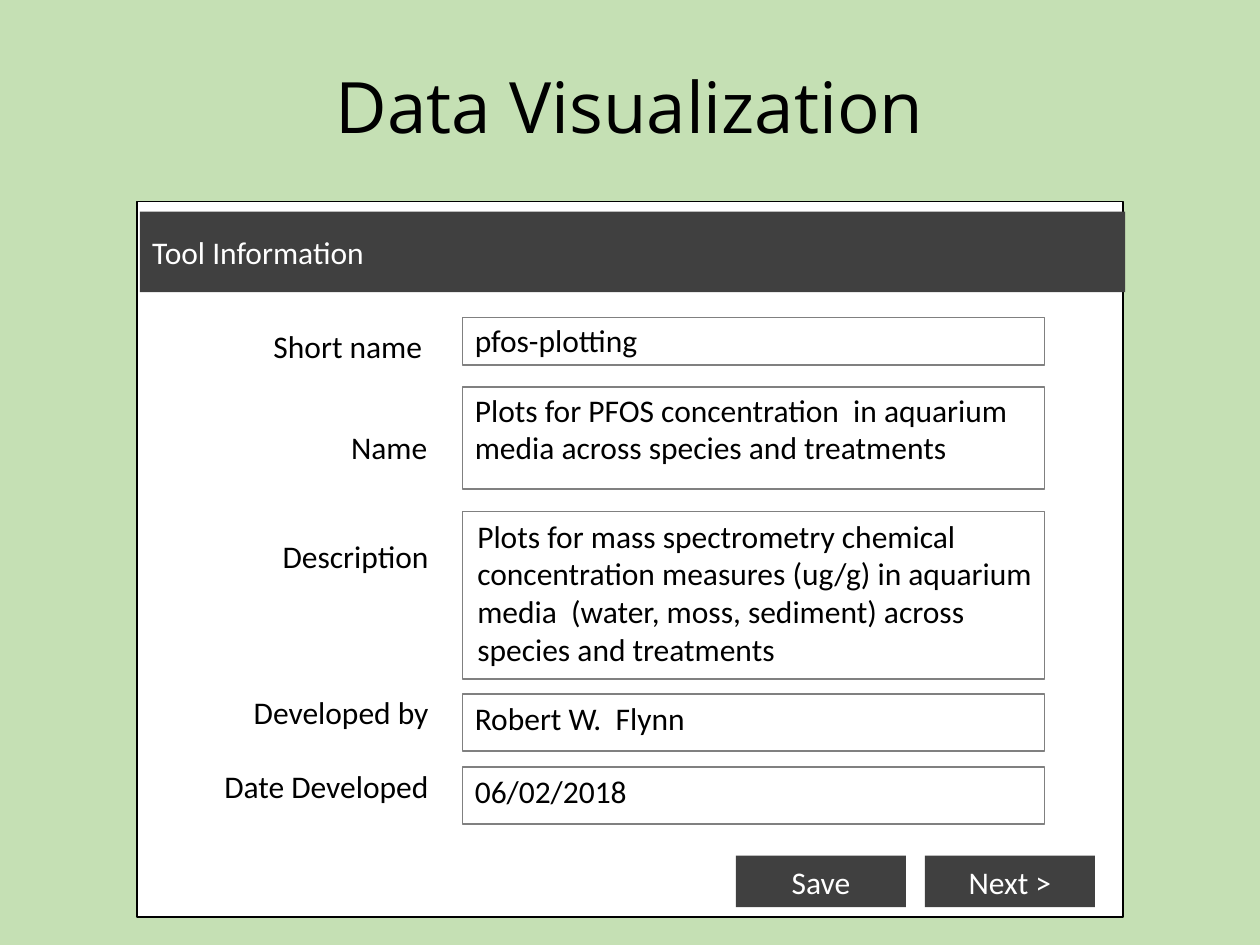
from pptx import Presentation
from pptx.dml.color import RGBColor
from pptx.enum.shapes import MSO_SHAPE
from pptx.enum.text import MSO_ANCHOR, PP_ALIGN
from pptx.util import Inches, Pt

RECT = MSO_SHAPE.RECTANGLE
TOP, MIDDLE = MSO_ANCHOR.TOP, MSO_ANCHOR.MIDDLE
LEFT, CENTER, RIGHT = PP_ALIGN.LEFT, PP_ALIGN.CENTER, PP_ALIGN.RIGHT
GREEN, WHITE, BLACK, DARK, GRAY = "C5E0B4", "FFFFFF", "000000", "404040", "808080"

TITLE = "Data Visualization"
HEADER = "Tool Information"
# label, label (left, top, width), field (top, height), value, value (left, top, width, height)
FIELDS = [
    ("Short name", (2.02, 2.55, 1.43), (2.52, 0.38),
     "pfos-plotting", (3.67, 2.5, 1.51, 0.4)),
    ("Name", (2.68, 3.35, 0.81), (3.07, 0.81),
     "Plots for PFOS concentration  in aquarium media across species and treatments",
     (3.67, 3.05, 4.48, 0.71)),
    ("Description", (2.12, 4.21, 1.38), (4.06, 1.33),
     "Plots for mass spectrometry chemical concentration measures (ug/g) in aquarium "
     "media  (water, moss, sediment) across species and treatments",
     (3.69, 4.05, 4.6, 1.31)),
    ("Developed by", (1.89, 5.45, 1.61), (5.51, 0.45),
     "Robert W.  Flynn", (3.67, 5.5, 1.89, 0.4)),
    ("Date Developed", (1.6, 6.04, 1.9), (6.09, 0.45),
     "06/02/2018", (3.67, 6.08, 1.42, 0.4)),
]
FIELD_LEFT, FIELD_WIDTH, LABEL_HEIGHT = 3.67, 4.62, 0.4
BUTTONS = ["Save", "Next >"]
BUTTON_LEFT, BUTTON_TOP, BUTTON_PITCH = 5.84, 6.79, 1.5


def rgb(color):
    return RGBColor.from_string(color)


def set_text(sp, text, color=BLACK, align=LEFT, anchor=TOP, size=18, font="Calibri"):
    tf = sp.text_frame
    tf.text = text
    tf.vertical_anchor = anchor
    p = tf.paragraphs[0]
    p.alignment = align
    p.font.size = Pt(size)
    p.font.name = font
    p.font.color.rgb = rgb(color)


def add_rect(s, box, fill, line=None):
    sp = s.shapes.add_shape(RECT, *map(Inches, box))
    sp.shadow.inherit = False
    sp.fill.solid()
    sp.fill.fore_color.rgb = rgb(fill)
    if line:
        sp.line.color.rgb = rgb(line)
        sp.line.width = Pt(1)
    else:
        sp.line.fill.background()
    return sp


def add_text(s, box, text, align=LEFT, wrap=True):
    sp = s.shapes.add_textbox(*map(Inches, box))
    sp.text_frame.word_wrap = wrap
    set_text(sp, text, align=align)


prs = Presentation()
prs.slide_width, prs.slide_height = Inches(10), Inches(7.5)
s = prs.slides.add_slide(prs.slide_layouts[5])
s.background.fill.solid()
s.background.fill.fore_color.rgb = rgb(GREEN)

title = s.shapes.title
title.left, title.top, title.width, title.height = map(Inches, (0.69, 0.15, 8.62, 1.45))
set_text(title, TITLE, align=CENTER, anchor=MIDDLE, size=40.5, font="Open Sans")
title.text_frame.paragraphs[0].line_spacing = 0.9

add_rect(s, (1.09, 1.6, 7.82, 5.68), WHITE, BLACK)
header = add_rect(s, (1.11, 1.68, 7.82, 0.64), DARK)
set_text(header, HEADER, WHITE, anchor=MIDDLE)

for label, label_box, (top, height), value, value_box in FIELDS:
    add_rect(s, (FIELD_LEFT, top, FIELD_WIDTH, height), WHITE, GRAY)
    add_text(s, (*label_box, LABEL_HEIGHT), label, RIGHT, wrap=False)
    add_text(s, value_box, value, wrap=value_box[3] > LABEL_HEIGHT)

for i, caption in enumerate(BUTTONS):
    button = add_rect(s, (BUTTON_LEFT + i * BUTTON_PITCH, BUTTON_TOP, 1.35, 0.41), DARK)
    set_text(button, caption, WHITE, CENTER, MIDDLE)

prs.save("out.pptx")
